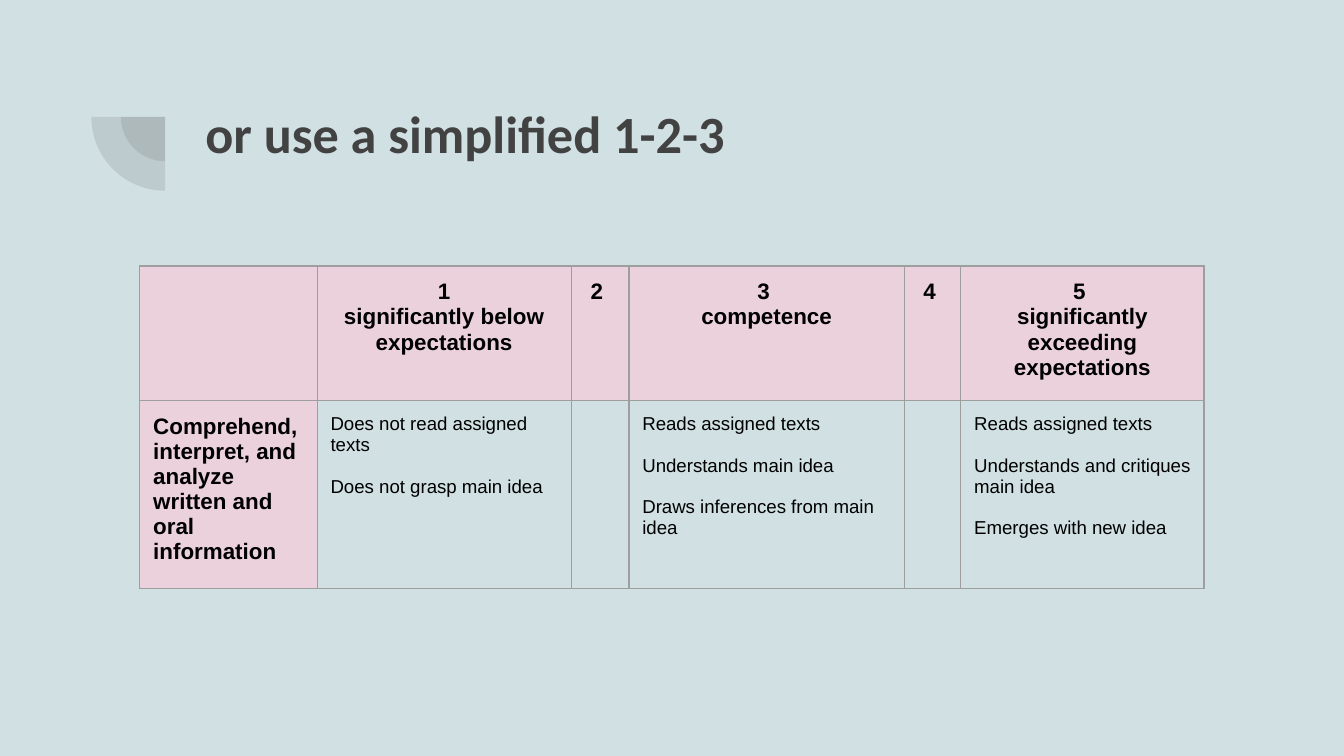
from lxml.etree import SubElement
from pptx import Presentation
from pptx.dml.color import RGBColor
from pptx.enum.shapes import MSO_SHAPE
from pptx.enum.text import PP_ALIGN
from pptx.oxml import parse_xml
from pptx.oxml.ns import nsdecls, qn
from pptx.util import Inches, Pt

HUES = {"back": "D0E0E3", "dark": "424242", "pink": "EAD1DC",
        "line": "9E9E9E", "text": "000000"}


def paint(fill, name):
    fill.solid()
    fill.fore_color.rgb = RGBColor.from_string(HUES[name])


def style(par, font, size, bold, hue):
    for run in par.runs:
        run.font.name = font
        run.font.size = Pt(size)
        run.font.bold = bold
        run.font.color.rgb = RGBColor.from_string(HUES[hue])


# Wide 16:9 slide
deck = Presentation()
deck.slide_width, deck.slide_height = Inches(10), Inches(10 * 9 / 16)
slide = deck.slides.add_slide(deck.slide_layouts[6])
paint(slide.background.fill, "back")

# Two quarter circles around one centre
for rad in (0.33, 0.55):
    pie = slide.shapes.add_shape(
        MSO_SHAPE.PIE, Inches(1.23 - rad), Inches(0.87 - rad),
        Inches(2 * rad), Inches(2 * rad))
    # Angles of 90 and 180 degrees, at 0.6 per degree
    pie.adjustments[0], pie.adjustments[1] = 54, 108
    pie.shadow.inherit = False
    pie.line.fill.background()
    paint(pie.fill, "dark")
    tint = pie.fill._xPr.find(qn("a:solidFill"))[0]
    SubElement(tint, qn("a:alpha"), val="13000")

# Title
box = slide.shapes.add_textbox(Inches(1.43), Inches(0.65), Inches(7.69), Inches(0.68))
frame = box.text_frame
frame.word_wrap = True
frame.margin_left = frame.margin_right = Inches(0.1)
frame.margin_top = frame.margin_bottom = Inches(0.1)
frame.text = "or use a simplified 1-2-3"
style(frame.paragraphs[0], "Calibri", 28, True, "dark")

# Rubric table; its rows grow to fit the text
ROWS = [
    ["", "1\nsignificantly below expectations", "2 ", "3 \ncompetence", "4 ",
     "5 \nsignificantly exceeding expectations"],
    ["Comprehend, interpret, and analyze written and oral information",
     "Does not read assigned texts\nDoes not grasp main idea", "",
     "Reads assigned texts\nUnderstands main idea\nDraws inferences from main idea", "",
     "Reads assigned texts\nUnderstands and critiques main idea\nEmerges with new idea"],
]
WIDTHS = [1.32, 1.89, 0.43, 2.05, 0.42, 1.81]
HIGH = 0.42
grid = slide.shapes.add_table(
    len(ROWS), len(WIDTHS), Inches(1.04), Inches(1.98),
    Inches(sum(WIDTHS)), Inches(HIGH * len(ROWS))).table
for col, wide in zip(grid.columns, WIDTHS):
    col.width = Inches(wide)

for r, texts in enumerate(ROWS):
    for c, text in enumerate(texts):
        cell = grid.cell(r, c)
        head = r == 0 or c == 0
        cell.margin_left = cell.margin_right = Inches(0.1)
        cell.margin_top = cell.margin_bottom = Inches(0.1)
        cell.text_frame.text = text
        for n, par in enumerate(cell.text_frame.paragraphs):
            par.alignment = PP_ALIGN.CENTER if r == 0 else PP_ALIGN.LEFT
            if n and not head:
                par.space_before = Pt(11)
            style(par, "Arial", 12 if head else 10, head, "text")
        # Borders come before the fill in the cell properties
        props = cell._tc.get_or_add_tcPr()
        for side in ("lnL", "lnR", "lnT", "lnB"):
            props.append(parse_xml(
                f'<a:{side} {nsdecls("a")} w="{Pt(0.75)}"><a:solidFill>'
                f'<a:srgbClr val="{HUES["line"]}"/></a:solidFill></a:{side}>'))
        if head:
            paint(cell.fill, "pink")
        else:
            cell.fill.background()

deck.save("out.pptx")
